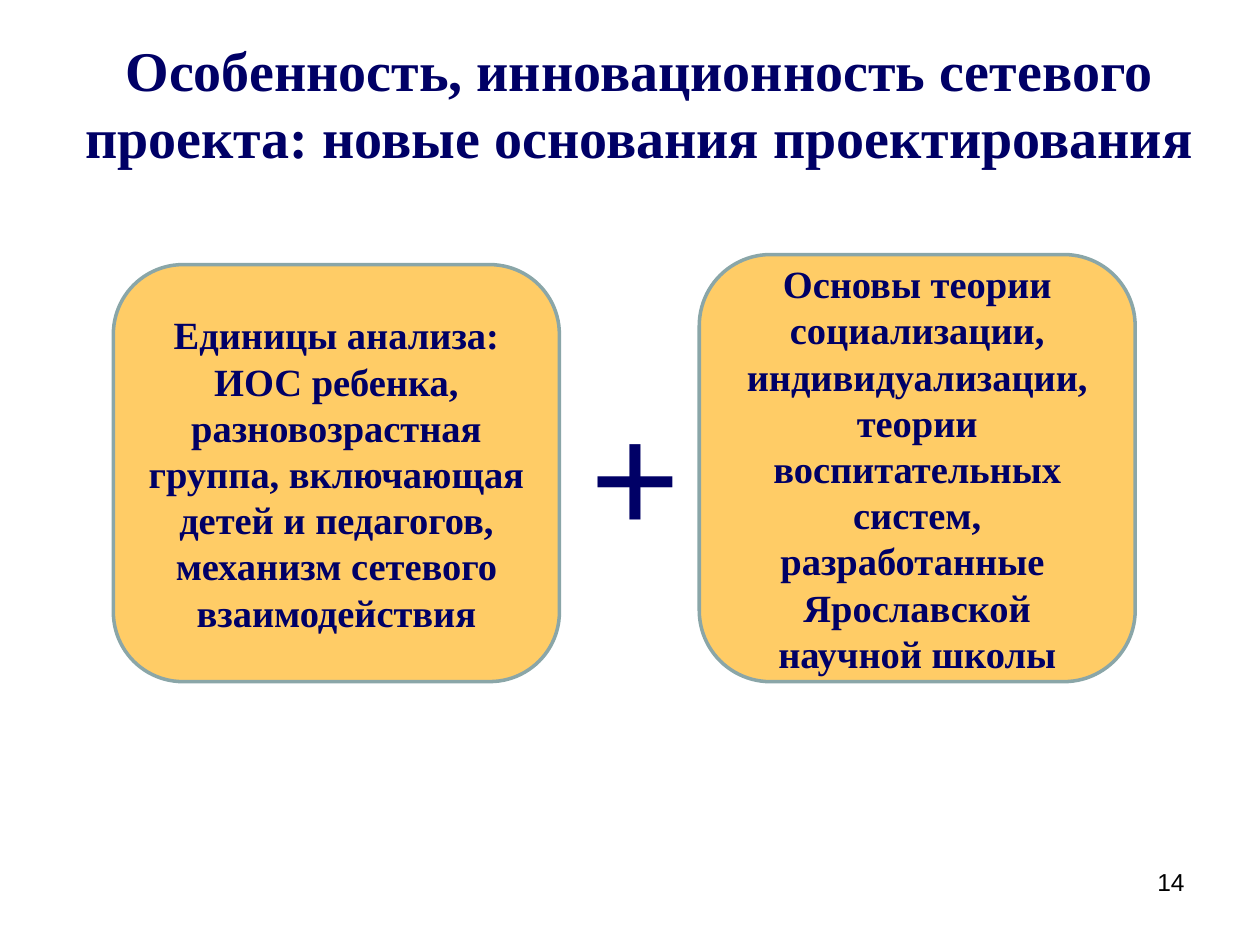
from pptx import Presentation
from pptx.dml.color import RGBColor
from pptx.enum.shapes import MSO_SHAPE
from pptx.enum.text import MSO_ANCHOR, MSO_AUTO_SIZE, PP_ALIGN
from pptx.util import Inches, Pt

NAVY = RGBColor(0x00, 0x00, 0x66)
AMBER = RGBColor(0xFF, 0xCC, 0x66)
GREY_TEAL = RGBColor(0x8A, 0xA6, 0xA8)
BLACK = RGBColor(0x00, 0x00, 0x00)
SERIF = "Times New Roman"
SANS = "Arial"
ROUNDED = MSO_SHAPE.ROUNDED_RECTANGLE
TOP = MSO_ANCHOR.TOP
MIDDLE = MSO_ANCHOR.MIDDLE
GROW = MSO_AUTO_SIZE.SHAPE_TO_FIT_TEXT
CENTER = PP_ALIGN.CENTER
RIGHT = PP_ALIGN.RIGHT

TITLE = "Особенность, инновационность сетевого проекта: новые основания проектирования"
ANALYSIS_UNITS = [
    "Единицы анализа:",
    "ИОС ребенка, разновозрастная группа, включающая детей и педагогов,",
    "механизм сетевого взаимодействия",
]
THEORY_BASES = [
    "Основы теории социализации, индивидуализации, теории "
    "воспитательных систем, разработанные ",
    "Ярославской научной школы",
]


def write(frame, lines, size, font=SERIF, color=NAVY, bold=True, align=CENTER):
    for index, line in enumerate(lines):
        paragraph = frame.paragraphs[0] if index == 0 else frame.add_paragraph()
        paragraph.alignment = align
        run = paragraph.add_run()
        run.text = line
        run.font.size = Pt(size)
        run.font.name = font
        run.font.bold = bold
        run.font.color.rgb = color


def set_title(slide):
    title = slide.shapes.title
    title.left, title.top = Inches(0.47), Inches(0.23)
    title.width, title.height = Inches(9.21), Inches(1.18)
    frame = title.text_frame
    frame.vertical_anchor = TOP
    frame.auto_size = GROW
    write(frame, [TITLE], 32)


def add_card(slide, left, top, width, height, lines):
    card = slide.shapes.add_shape(
        ROUNDED, Inches(left), Inches(top), Inches(width), Inches(height))
    card.shadow.inherit = False
    card.fill.solid()
    card.fill.fore_color.rgb = AMBER
    card.line.color.rgb = GREY_TEAL
    card.line.width = Pt(2)
    frame = card.text_frame
    frame.word_wrap = True
    frame.vertical_anchor = MIDDLE
    write(frame, lines, 22)


def add_label(slide, left, top, width, height, text, size, color, align, wrap):
    label = slide.shapes.add_textbox(
        Inches(left), Inches(top), Inches(width), Inches(height))
    label.text_frame.word_wrap = wrap
    write(label.text_frame, [text], size, SANS, color, False, align)


def main():
    deck = Presentation()
    deck.slide_width, deck.slide_height = Inches(10), Inches(7.5)
    slide = deck.slides.add_slide(deck.slide_layouts[5])
    set_title(slide)
    add_card(slide, 0.9, 2.1, 3.54, 3.31, ANALYSIS_UNITS)
    add_card(slide, 5.55, 2.02, 3.46, 3.39, THEORY_BASES)
    add_label(slide, 4.58, 2.96, 0.92, 1.58, "+", 88, NAVY, CENTER, False)
    add_label(slide, 7.17, 6.83, 2.33, 0.52, "14", 14, BLACK, RIGHT, True)
    deck.save("out.pptx")


if __name__ == "__main__":
    main()
